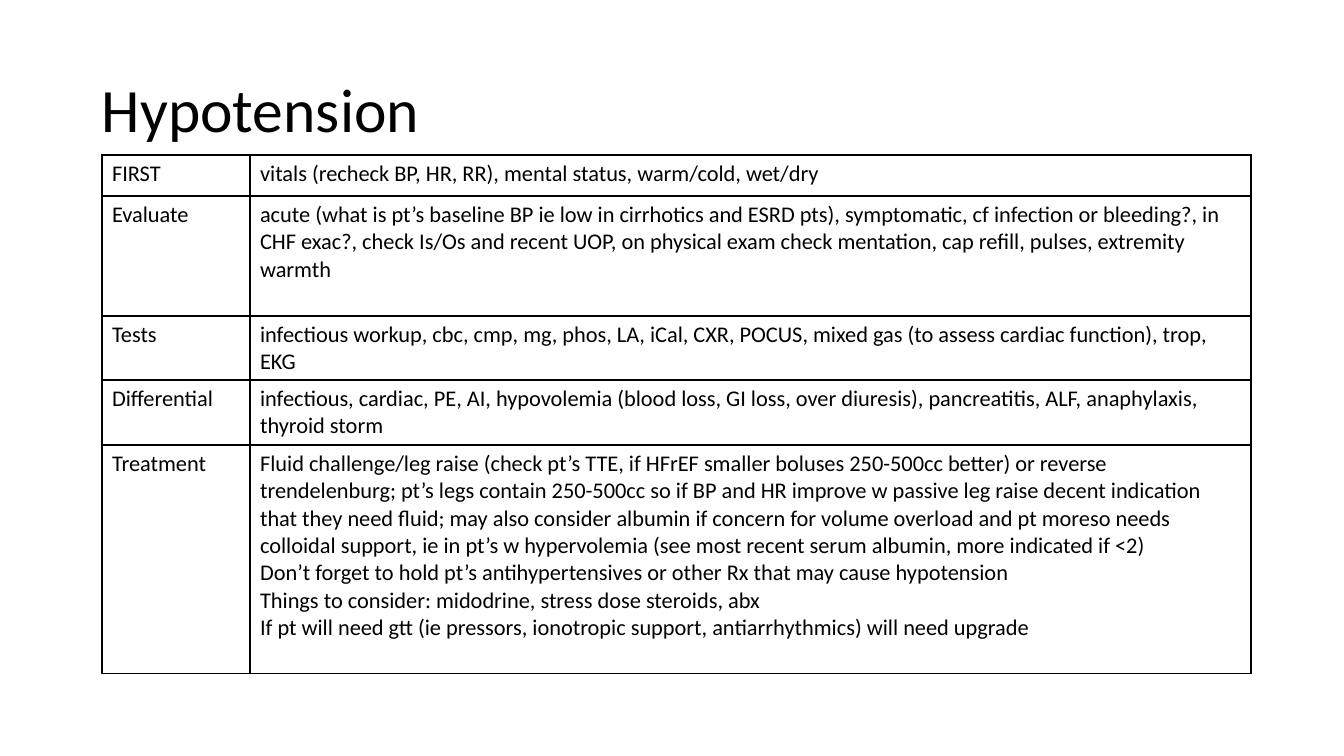
from dataclasses import dataclass

from lxml.etree import SubElement
from pptx import Presentation
from pptx.dml.color import RGBColor
from pptx.enum.text import MSO_ANCHOR
from pptx.oxml.ns import qn
from pptx.slide import Slide
from pptx.table import _Cell
from pptx.text.text import TextFrame
from pptx.util import Emu, Pt

BLACK = RGBColor(0x00, 0x00, 0x00)
FONT = "Calibri"
PX_PER_INCH = 100.8
BORDER_WIDTH = Pt(1)
TOPIC_WIDTH, GUIDANCE_WIDTH = 148, 1001


@dataclass(frozen=True)
class Step:
    topic: str
    guidance: str
    height: int


STEPS = [
    Step("FIRST", "vitals (recheck BP, HR, RR), mental status, warm/cold, wet/dry", 41),
    Step(
        "Evaluate",
        "acute (what is pt’s baseline BP ie low in cirrhotics and ESRD pts), symptomatic, "
        "cf infection or bleeding?, in CHF exac?, check Is/Os and recent UOP, on physical "
        "exam check mentation, cap refill, pulses, extremity warmth",
        120,
    ),
    Step(
        "Tests",
        "infectious workup, cbc, cmp, mg, phos, LA, iCal, CXR, POCUS, mixed gas "
        "(to assess cardiac function), trop, EKG",
        64,
    ),
    Step(
        "Differential",
        "infectious, cardiac, PE, AI, hypovolemia (blood loss, GI loss, over diuresis), "
        "pancreatitis, ALF, anaphylaxis, thyroid storm",
        65,
    ),
    Step(
        "Treatment",
        "Fluid challenge/leg raise (check pt’s TTE, if HFrEF smaller boluses 250-500cc "
        "better) or reverse trendelenburg; pt’s legs contain 250-500cc so if BP and HR "
        "improve w passive leg raise decent indication that they need fluid; may also "
        "consider albumin if concern for volume overload and pt moreso needs colloidal "
        "support, ie in pt’s w hypervolemia (see most recent serum albumin, more "
        "indicated if <2)\n"
        "Don’t forget to hold pt’s antihypertensives or other Rx that may cause hypotension\n"
        "Things to consider: midodrine, stress dose steroids, abx\n"
        "If pt will need gtt (ie pressors, ionotropic support, antiarrhythmics) will need upgrade",
        229,
    ),
]


def px(length: int) -> Emu:
    """Turn whole pixels into EMU."""
    return Emu(round(length * 914400 / PX_PER_INCH))


def write(frame: TextFrame, text: str, size: int) -> None:
    """Set the text of a frame and format its runs."""
    frame.text = text
    for paragraph in frame.paragraphs:
        for run in paragraph.runs:
            run.font.name = FONT
            run.font.size = Pt(size)
            run.font.color.rgb = BLACK


def outline(cell: _Cell) -> None:
    """Draw a thin black border on every side of a cell."""
    properties = cell._tc.get_or_add_tcPr()
    for side in ("a:lnL", "a:lnR", "a:lnT", "a:lnB"):
        line = SubElement(properties, qn(side), w=str(BORDER_WIDTH))
        fill = SubElement(line, qn("a:solidFill"))
        SubElement(fill, qn("a:srgbClr"), val=str(BLACK))


def draw_title(slide: Slide, title: str) -> None:
    """Place the slide title."""
    frame = slide.shapes.add_textbox(px(92), px(40), px(1159), px(146)).text_frame
    frame.word_wrap = True
    frame.vertical_anchor = MSO_ANCHOR.MIDDLE
    write(frame, title, 44)
    frame.paragraphs[0].line_spacing = 0.9


def draw_steps(slide: Slide, steps: list[Step]) -> None:
    """Place the table with one row for each step."""
    widths = (TOPIC_WIDTH, GUIDANCE_WIDTH)
    total_height = sum(step.height for step in steps)
    plan = slide.shapes.add_table(
        len(steps), len(widths), px(102), px(155), px(sum(widths)), px(total_height)
    ).table
    plan.first_row = False
    plan.horz_banding = False
    for column, width in zip(plan.columns, widths):
        column.width = px(width)
    for row, step in zip(plan.rows, steps):
        row.height = px(step.height)
        for cell, text in zip(row.cells, (step.topic, step.guidance)):
            write(cell.text_frame, text, 16)
            outline(cell)
            cell.fill.background()


def main() -> None:
    """Build and save the slide."""
    deck = Presentation()
    deck.slide_width, deck.slide_height = px(1344), px(756)
    slide = deck.slides.add_slide(deck.slide_layouts[6])
    draw_title(slide, "Hypotension")
    draw_steps(slide, STEPS)
    deck.save("out.pptx")


if __name__ == "__main__":
    main()
